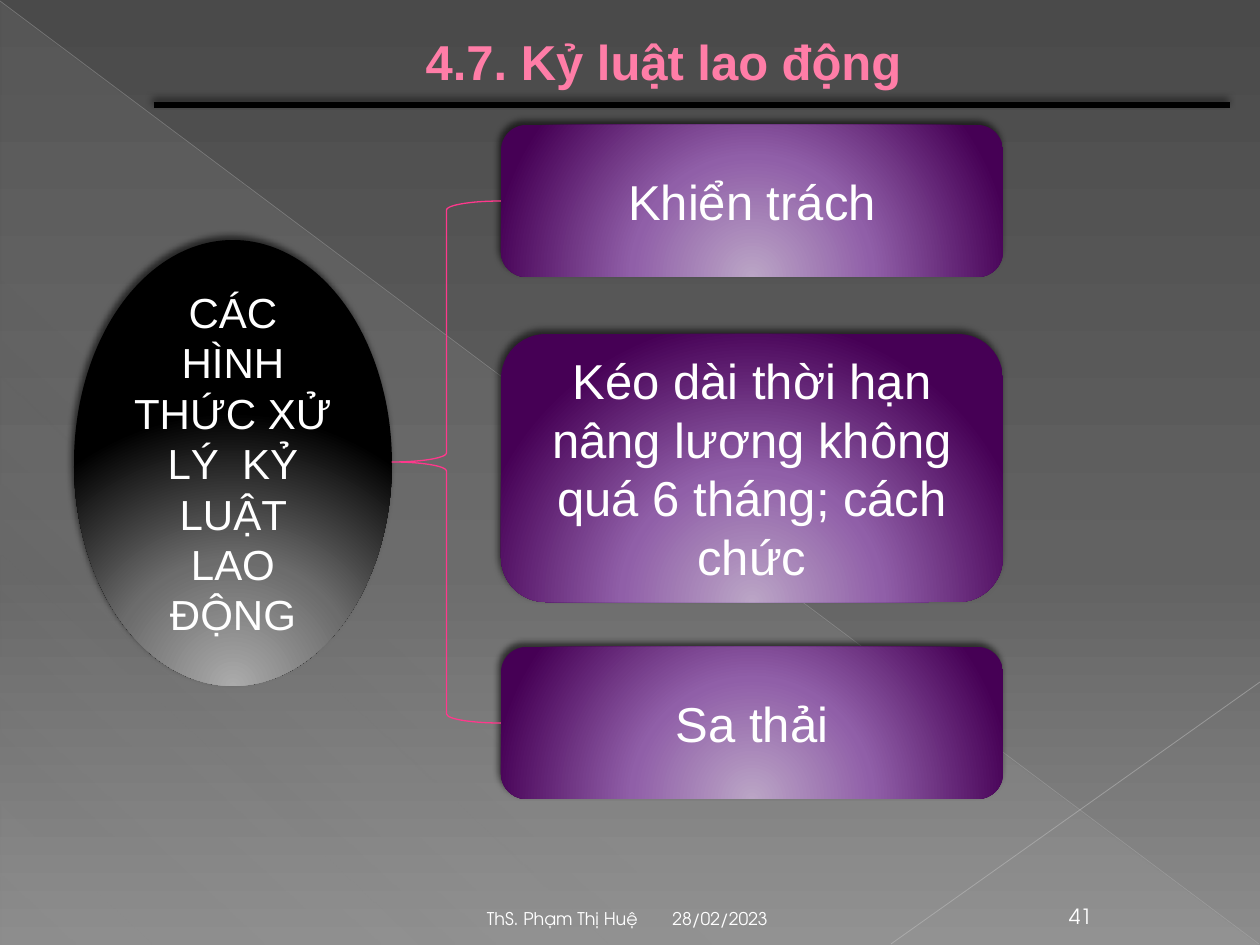
from pptx import Presentation
from pptx.dml.color import RGBColor
from pptx.enum.shapes import MSO_CONNECTOR as Connector, MSO_SHAPE as Shape
from pptx.enum.text import MSO_ANCHOR as Anchor, PP_ALIGN as Align
from pptx.oxml import parse_xml
from pptx.oxml.ns import nsdecls
from pptx.util import Pt

PX = 914400 / 126
COLORS = {
    "white": "FFFFFF", "black": "000000", "title": "FF7DA7", "title_outline": "B12761",
    "brace": "FF388C", "haze": "D2D2D2", "falling": "BFBFBF", "rising": "C6C6C6",
}
BACKGROUND = [(0, "4A4A4A", 100), (60, "626262", 100), (100, "8C8C8C", 100)]
HAZE = [(0, COLORS["haze"], 10), (70, COLORS["haze"], 8), (100, COLORS["haze"], 1)]
PURPLE = [(0, "BBA5C6", 100), (46, "905FA8", 100), (100, "460055", 100)]
GRAY = [(0, "ABABAB", 100), (46, "6C6C6C", 100), (100, "000000", 100)]
GLOW = ('<a:path path="circle"><a:fillToRect l="50000" t="155000" r="50000" b="-55000"/>'
        '</a:path>')


def px(*lengths):
    return [round(length * PX) for length in lengths]


def color(name):
    return RGBColor.from_string(COLORS[name])


def linear(angle):
    return f'<a:lin ang="{angle * 60000}" scaled="0"/>'


def gradient(stops, direction):
    marks = "".join(
        f'<a:gs pos="{position * 1000}"><a:srgbClr val="{value}">'
        f'<a:alpha val="{opacity * 1000}"/></a:srgbClr></a:gs>'
        for position, value, opacity in stops)
    return parse_xml(f'<a:gradFill {nsdecls("a")} rotWithShape="1">'
                     f'<a:gsLst>{marks}</a:gsLst>{direction}</a:gradFill>')


def replace_fill(properties, stops, direction):
    solid = properties.xpath("./a:solidFill")[0]
    properties.replace(solid, gradient(stops, direction))


def set_effects(shape, shadowed):
    shadow = (f'<a:outerShdw blurRad="{Pt(4)}" dist="{Pt(3)}" dir="{245 * 60000}" '
              f'algn="tl" rotWithShape="0"><a:srgbClr val="{COLORS["black"]}">'
              '<a:alpha val="60000"/></a:srgbClr></a:outerShdw>') if shadowed else ""
    shape.element.spPr.append(
        parse_xml(f'<a:effectLst {nsdecls("a")}>{shadow}</a:effectLst>'))


class SlideBuilder:
    text_font = "Arial"
    footer_font = "TeX Gyre Adventor"

    def __init__(self, slide):
        self.slide = slide

    def background(self, stops, angle):
        self.slide.background.fill.solid()
        properties = self.slide.element.xpath(".//p:bgPr")[0]
        replace_fill(properties, stops, linear(angle))

    def set_text(self, shape, text, size, font=text_font, tint="white",
                 align=Align.CENTER, anchor=Anchor.MIDDLE):
        frame = shape.text_frame
        frame.text = text
        frame.word_wrap = True
        frame.vertical_anchor = anchor
        paragraph = frame.paragraphs[0]
        paragraph.alignment = align
        run = paragraph.runs[0]
        run.font.size = Pt(size)
        run.font.name = font
        run.font.color.rgb = color(tint)
        return paragraph

    def title(self, text, box, indent):
        title = self.slide.shapes.title
        title.left, title.top, title.width, title.height = px(*box)
        title.element.getparent().append(title.element)
        paragraph = self.set_text(title, text, 28, tint="title")
        properties = paragraph._p.get_or_add_pPr()
        properties.set("marL", str(px(indent)[0]))
        properties.set("indent", "0")
        font = paragraph.runs[0].font
        font.bold = True
        font._element.insert(0, parse_xml(
            f'<a:ln {nsdecls("a")} w="{Pt(0.5)}"><a:solidFill>'
            f'<a:srgbClr val="{COLORS["title_outline"]}"/></a:solidFill></a:ln>'))

    def footer(self, text, box, size, align):
        shape = self.slide.shapes.add_textbox(*px(*box))
        self.set_text(shape, text, size, self.footer_font, align=align, anchor=Anchor.BOTTOM)

    def shape(self, kind, box, stops, direction, shadowed=True):
        shape = self.slide.shapes.add_shape(kind, *px(*box))
        shape.fill.solid()
        replace_fill(shape.element.spPr, stops, direction)
        shape.line.fill.background()
        set_effects(shape, shadowed)
        return shape

    def brace(self, box):
        brace = self.slide.shapes.add_shape(Shape.LEFT_BRACE, *px(*box))
        brace.fill.background()
        brace.line.color.rgb = color("brace")
        brace.line.width = Pt(0.75)
        set_effects(brace, False)

    def line(self, ends, tint, width, opacity=100, shadowed=False):
        line = self.slide.shapes.add_connector(Connector.STRAIGHT, *px(*ends))
        line.line.color.rgb = color(tint)
        line.line.width = Pt(width)
        line.element.xpath(".//a:ln//a:srgbClr")[0].append(
            parse_xml(f'<a:alpha {nsdecls("a")} val="{opacity * 1000}"/>'))
        set_effects(line, shadowed)


def main():
    presentation = Presentation()
    presentation.slide_width, presentation.slide_height = px(1260, 945)
    builder = SlideBuilder(presentation.slides.add_slide(presentation.slide_layouts[5]))

    builder.background(BACKGROUND, 90)
    builder.shape(Shape.RIGHT_TRIANGLE, (1, 2, 1258, 943), HAZE, linear(133), shadowed=False)
    builder.line((0, 1, 1259, 944), "falling", 0.39, 35)
    builder.line((1260, 682, 891, 944), "rising", 0.47, 45)

    builder.title("4.7. Kỷ luật lao động", (0, -4, 1260, 130), 67)
    builder.footer("28/02/2023", (660, 893, 294, 42), 10, Align.LEFT)
    builder.footer("ThS. Phạm Thị Huệ", (63, 893, 587, 42), 10, Align.RIGHT)
    builder.footer("41", (1046, 893, 69, 42), 12, Align.CENTER)
    builder.line((154, 105, 1230, 105), "black", 3, shadowed=True)

    topic = builder.shape(Shape.OVAL, (74, 240, 318, 446), GRAY, GLOW)
    builder.set_text(topic, "CÁC HÌNH THỨC XỬ LÝ  KỶ LUẬT LAO ĐỘNG", 24)

    measures = [
        ("Khiển trách", 125, 152),
        ("Kéo dài thời hạn nâng lương không quá 6 tháng; cách chức", 334, 268),
        ("Sa thải", 647, 152),
    ]
    for text, top, height in measures:
        measure = builder.shape(Shape.ROUNDED_RECTANGLE, (501, top, 502, height), PURPLE, GLOW)
        builder.set_text(measure, text, 28)
    builder.brace((392, 201, 109, 522))

    presentation.save("out.pptx")


if __name__ == "__main__":
    main()
